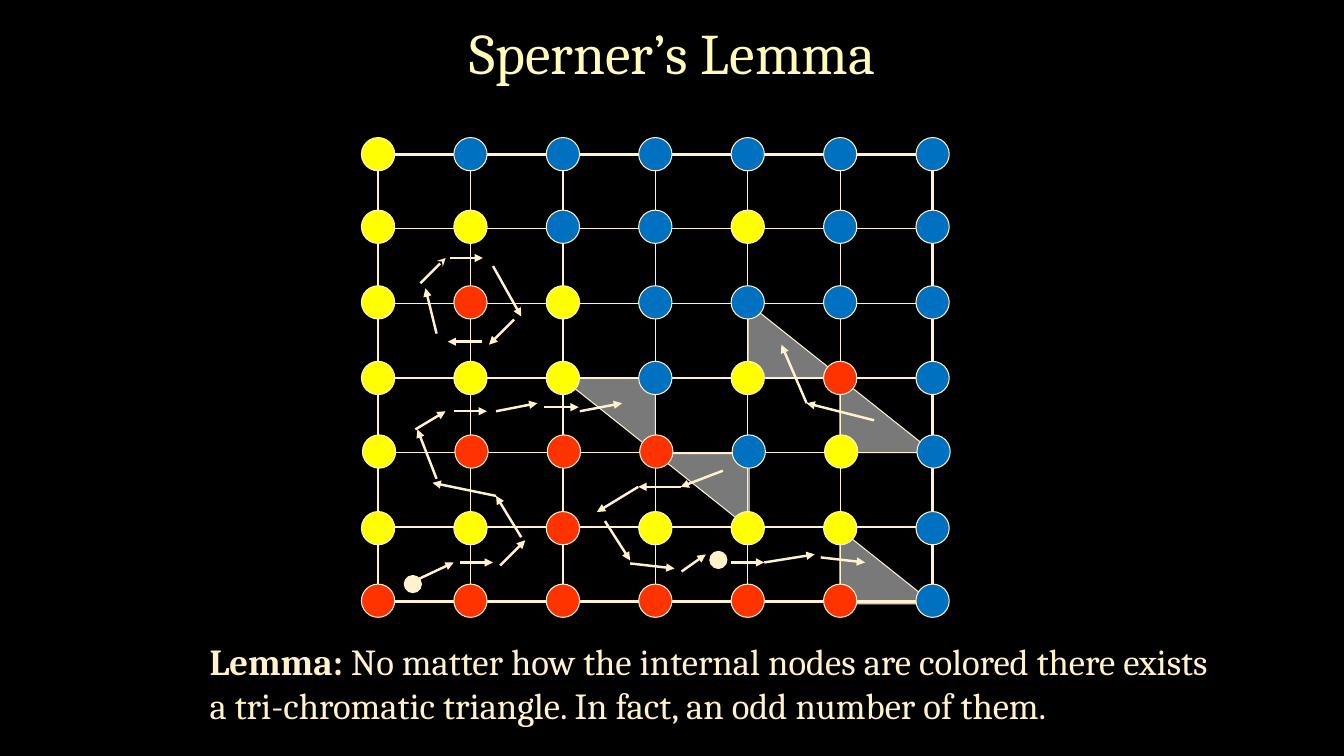
from lxml import etree
from pptx import Presentation
from pptx.dml.color import RGBColor
from pptx.enum.shapes import MSO_CONNECTOR, MSO_SHAPE
from pptx.enum.text import MSO_ANCHOR, MSO_AUTO_SIZE, PP_ALIGN
from pptx.oxml.ns import qn
from pptx.util import Emu, Pt

OVAL, TRIANGLE = MSO_SHAPE.OVAL, MSO_SHAPE.RIGHT_TRIANGLE
STRAIGHT = MSO_CONNECTOR.STRAIGHT
MIDDLE, CENTER = MSO_ANCHOR.MIDDLE, PP_ALIGN.CENTER
GROW = MSO_AUTO_SIZE.SHAPE_TO_FIT_TEXT

# Content: lengths in px, 100 px to the inch
TITLE = "Sperner’s Lemma"
LEMMA = ("Lemma:", " No matter how the internal nodes are colored there exists "
         "a tri-chromatic triangle. In fact, an odd number of them.")
FONT, CREAM, GREY = "Cambria", "FFF2CC", "E7E6E6"
NODE_COLORS = {"Y": "FFFF00", "B": "0070C0", "R": "FF3300"}
NODES = ["YBBBBBB",
         "YYBBYBB",
         "YRYBBBB",
         "YYYBYRB",
         "YRRRBYB",
         "YYRYYYB",
         "RRRRRRB"]
NODE_ROWS_Y = [153, 225, 300, 375, 448, 524, 596]
SHIFTED_ROW, ROW_SHIFT = 4, 1
NODE_D, START_D = 33, 17
GRID_X, GRID_Y, GRID_W, GRID_H, GRID_N = 375, 153, 550, 444, 6
TRIANGLE_W, TRIANGLE_H = 93, 74
TRIANGLES = [(833, 525, 0), (833, 375, 0), (650, 450, 180),
             (742, 301, 0), (557, 375, 180)]  # left, top, rotation
LOOP = [(446, 256, 479, 256), (417, 281, 442, 256), (433, 331, 422, 286),
        (478, 339, 444, 339), (510, 317, 485, 342), (489, 264, 517, 314)]
RIGHT_PATH = [(867, 417, 800, 400), (800, 400, 775, 342)]
LEFT_PATH = [(414, 575, 450, 558), (456, 558, 489, 558), (496, 561, 521, 536),
             (517, 533, 492, 492), (492, 492, 429, 479), (433, 475, 414, 426),
             (412, 426, 442, 408), (450, 408, 483, 408), (492, 408, 533, 400),
             (540, 404, 574, 404), (575, 408, 617, 400)]
MIDDLE_PATH = [(717, 467, 675, 483), (675, 483, 633, 483), (633, 483, 592, 508),
               (600, 517, 625, 556), (625, 559, 669, 564), (676, 567, 700, 550),
               (725, 558, 758, 558), (758, 558, 808, 550), (814, 553, 858, 558)]
STARTS = [(401, 571), (704, 547)]


def px(n):
    return Emu(round(n * 9144))


def rgb(color):
    return RGBColor.from_string(color)


prs = Presentation()
prs.slide_width, prs.slide_height = px(1333), px(750)
s = prs.slides.add_slide(prs.slide_layouts[6])
s.background.fill.solid()
s.background.fill.fore_color.rgb = rgb("000000")


def add_figure(kind, x, y, w, h, color):
    sp = s.shapes.add_shape(kind, px(x), px(y), px(w), px(h))
    sp.shadow.inherit = False
    sp.fill.solid()
    sp.fill.fore_color.rgb = rgb(color)
    sp.line.color.rgb = rgb(CREAM)
    sp.line.width = Pt(0.75)
    return sp


def add_border(cell, side, width):
    ln = etree.SubElement(cell._tc.get_or_add_tcPr(), qn("a:ln" + side), w=str(Pt(width)))
    fill = etree.SubElement(ln, qn("a:solidFill"))
    etree.SubElement(fill, qn("a:srgbClr"), val=CREAM)


def add_arrow(x1, y1, x2, y2, head="triangle"):
    c = s.shapes.add_connector(STRAIGHT, px(x1), px(y1), px(x2), px(y2))
    c.line.color.rgb = rgb(CREAM)
    c.line.width = Pt(1.75)
    etree.SubElement(c.line._get_or_add_ln(), qn("a:tailEnd"), type=head)
    etree.SubElement(c._element.spPr, qn("a:effectLst"))


def add_text(x, y, w, h, runs, size, color):
    tf = s.shapes.add_textbox(px(x), px(y), px(w), px(h)).text_frame
    tf.word_wrap = True
    p = tf.paragraphs[0]
    for text, bold in runs:
        r = p.add_run()
        r.text = text
        r.font.name, r.font.size, r.font.bold = FONT, Pt(size), bold
        r.font.color.rgb = rgb(color)
    return tf


# Translucent tri-chromatic triangles
for x, y, rotation in TRIANGLES:
    sp = add_figure(TRIANGLE, x, y, TRIANGLE_W, TRIANGLE_H, GREY)
    sp.rotation = rotation
    clr = sp._element.spPr.find(qn("a:solidFill")).find(qn("a:srgbClr"))
    etree.SubElement(clr, qn("a:alpha"), val="53000")

# Grid with a heavier outer border
table = s.shapes.add_table(GRID_N, GRID_N, px(GRID_X), px(GRID_Y),
                           px(GRID_W), px(GRID_H)).table
table.first_row = table.horz_banding = False
last = GRID_N - 1
for row in range(GRID_N):
    for col in range(GRID_N):
        cell = table.cell(row, col)
        outer = {"L": col == 0, "R": col == last, "T": row == 0, "B": row == last}
        for side, heavy in outer.items():
            add_border(cell, side, 2.25 if heavy else 1)
        cell.fill.background()

# Colored nodes
for row, (y, letters) in enumerate(zip(NODE_ROWS_Y, NODES)):
    shift = ROW_SHIFT if row == SHIFTED_ROW else 0
    for col, letter in enumerate(letters):
        x = GRID_X + col * GRID_W / GRID_N + shift
        add_figure(OVAL, x - NODE_D / 2, y - NODE_D / 2, NODE_D, NODE_D,
                   NODE_COLORS[letter])

# Walks through the grid
for i, arrow in enumerate(LOOP):
    add_arrow(*arrow, head="stealth" if i == 1 else "triangle")
for arrow in RIGHT_PATH + LEFT_PATH + MIDDLE_PATH:
    add_arrow(*arrow)
for x, y in STARTS:
    add_figure(OVAL, x, y, START_D, START_D, CREAM)

# Lemma and title
tf = add_text(198, 629, 1025, 98, zip(LEMMA, (True, False)), 26.2, CREAM)
tf.auto_size = GROW
tf = add_text(92, -17, 1150, 145, [(TITLE, False)], 41, "FFFCB9")
tf.vertical_anchor = MIDDLE
tf.paragraphs[0].alignment = CENTER
tf.paragraphs[0].line_spacing = 0.9

prs.save("out.pptx")
